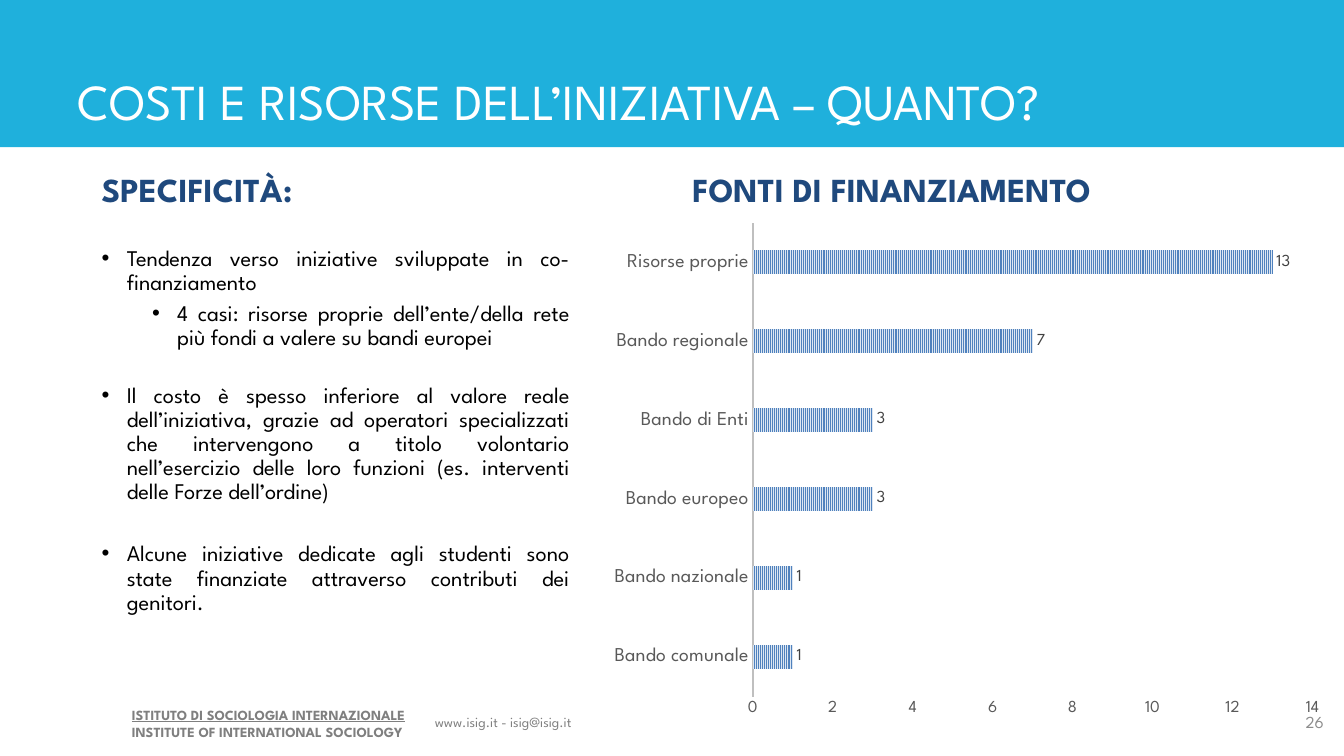
from lxml import etree
from pptx import Presentation
from pptx.chart.data import CategoryChartData
from pptx.dml.color import RGBColor
from pptx.enum.chart import XL_CHART_TYPE, XL_LABEL_POSITION, XL_TICK_MARK
from pptx.enum.dml import MSO_PATTERN
from pptx.enum.shapes import MSO_SHAPE
from pptx.enum.text import MSO_ANCHOR, PP_ALIGN
from pptx.oxml.ns import qn
from pptx.util import Inches, Pt

BAR_CHART = XL_CHART_TYPE.BAR_CLUSTERED
OUTSIDE_END = XL_LABEL_POSITION.OUTSIDE_END
NO_TICK = XL_TICK_MARK.NONE
STRIPES = MSO_PATTERN.NARROW_VERTICAL
RECTANGLE = MSO_SHAPE.RECTANGLE
TOP, MIDDLE, BOTTOM = MSO_ANCHOR.TOP, MSO_ANCHOR.MIDDLE, MSO_ANCHOR.BOTTOM
LEFT, CENTER, RIGHT = PP_ALIGN.LEFT, PP_ALIGN.CENTER, PP_ALIGN.RIGHT
JUSTIFY = PP_ALIGN.JUSTIFY

FONT = "League Spartan"
WIDTH, HEIGHT = 13.33, 7.5
BAND_HEIGHT = 1.46
LEFT_COLUMN, RIGHT_COLUMN = 0.91, 6.77
COLUMN_WIDTH = 5.64
HEADING_TOP, HEADING_HEIGHT = 1.63, 0.7
FOOTER_TOP = 6.96
HANGING = 0.25

# Text, left indent in inches, space before in points
POINTS = [
    ("Tendenza verso iniziative sviluppate in co-finanziamento", 0.25, 0),
    ("4 casi: risorse proprie dell’ente/della rete più fondi a valere su bandi europei",
     0.75, 4.8),
    ("Il costo è spesso inferiore al valore reale dell’iniziativa, grazie ad operatori "
     "specializzati che intervengono a titolo volontario nell’esercizio delle loro "
     "funzioni (es. interventi delle Forze dell’ordine)", 0.25, 24),
    ("Alcune iniziative dedicate agli studenti sono state finanziate attraverso "
     "contributi dei genitori.", 0.25, 27),
]
FUNDING = {
    "Bando comunale": 1,
    "Bando nazionale": 1,
    "Bando europeo": 3,
    "Bando di Enti": 3,
    "Bando regionale": 7,
    "Risorse proprie": 13,
}


def color(value):
    return RGBColor.from_string(value)


def style(font, size, tint, bold=False):
    font.name = FONT
    font.size = Pt(size)
    font.bold = bold
    font.color.rgb = color(tint)


def add_box(page, place, anchor=TOP, wrap=True):
    box = page.shapes.add_textbox(*map(Inches, place))
    frame = box.text_frame
    frame.word_wrap = wrap
    frame.vertical_anchor = anchor
    return frame


def add_line(page, place, text, size, tint, bold=False, align=LEFT, anchor=TOP, wrap=True):
    """Add a box that holds a single paragraph."""
    para = add_box(page, place, anchor, wrap).paragraphs[0]
    para.text = text
    para.alignment = align
    style(para.font, size, tint, bold)


def add_band(page):
    band = page.shapes.add_shape(RECTANGLE, 0, 0, Inches(WIDTH), Inches(BAND_HEIGHT))
    band.shadow.inherit = False
    band.fill.solid()
    band.fill.fore_color.rgb = color("1FB0DC")
    band.line.fill.background()


def add_heading(page, left, text):
    place = (left, HEADING_TOP, COLUMN_WIDTH, HEADING_HEIGHT)
    add_line(page, place, text, 24, "1F497D", bold=True)


def add_bullet(para, indent):
    properties = para._p.get_or_add_pPr()
    properties.set("marL", str(Inches(indent)))
    properties.set("indent", str(-Inches(HANGING)))
    etree.SubElement(properties, qn("a:buFont")).set("typeface", "Arial")
    etree.SubElement(properties, qn("a:buChar")).set("char", "•")


def add_points(page):
    frame = add_box(page, (LEFT_COLUMN, 2.4, 4.84, 4.35))
    for index, (text, indent, space) in enumerate(POINTS):
        para = frame.add_paragraph() if index else frame.paragraphs[0]
        para.text = text
        para.alignment = JUSTIFY
        para.line_spacing = 0.9
        para.space_before = Pt(space)
        add_bullet(para, indent)
        style(para.font, 16, "000000")


def add_institute(page):
    frame = add_box(page, (1.21, FOOTER_TOP, 3.02, 0.44), wrap=False)
    names = ("ISTITUTO DI SOCIOLOGIA INTERNAZIONALE", "INSTITUTE OF INTERNATIONAL SOCIOLOGY")
    for index, name in enumerate(names):
        para = frame.add_paragraph() if index else frame.paragraphs[0]
        para.text = name
        para.alignment = JUSTIFY
        style(para.font, 10, "7F7F7F", bold=True)
        para.font.underline = index == 0


def style_axis(axis, size):
    axis.has_major_gridlines = False
    axis.major_tick_mark = axis.minor_tick_mark = NO_TICK
    style(axis.tick_labels.font, size, "595959")


def add_funding_chart(page):
    data = CategoryChartData(number_format="###0")
    data.categories = list(FUNDING)
    data.add_series("Series 1", list(FUNDING.values()))
    place = map(Inches, (5.95, 2.11, 7.28, 5.1))
    chart = page.shapes.add_chart(BAR_CHART, *place, data).chart
    chart.has_legend = chart.has_title = False
    style(chart.font, 10, "000000")

    categories, values = chart.category_axis, chart.value_axis
    style_axis(categories, 14)
    categories.format.line.color.rgb = color("BFBFBF")
    categories.format.line.width = Pt(1.5)
    style_axis(values, 12)
    values.format.line.fill.background()
    values.minimum_scale, values.maximum_scale, values.major_unit = 0, 14, 2

    plot = chart.plots[0]
    plot.vary_by_categories = False
    plot.gap_width, plot.overlap = 227, -48
    fill = plot.series[0].format.fill
    fill.patterned()
    fill.pattern = STRIPES
    fill.fore_color.rgb = color("4F81BD")
    fill.back_color.rgb = color("DCE6F2")

    plot.has_data_labels = True
    labels = plot.data_labels
    labels.show_value = True
    labels.position = OUTSIDE_END
    labels.number_format = "###0"
    labels.number_format_is_linked = False
    style(labels.font, 12, "404040")


def main():
    deck = Presentation()
    deck.slide_width, deck.slide_height = Inches(WIDTH), Inches(HEIGHT)
    page = deck.slides.add_slide(deck.slide_layouts[6])
    add_institute(page)
    add_line(page, (4.15, 7.03, 1.68, 0.27), "www.isig.it - isig@isig.it", 10, "808080",
             align=CENTER, wrap=False)
    add_band(page)
    add_line(page, (0.67, 0, 11.74, 1.34), "COSTI E RISORSE DELL’INIZIATIVA – QUANTO?",
             36, "FFFFFF", anchor=BOTTOM)
    add_heading(page, LEFT_COLUMN, "SPECIFICITÀ:")
    add_points(page)
    add_heading(page, RIGHT_COLUMN, "FONTI DI FINANZIAMENTO")
    add_funding_chart(page)
    add_line(page, (12.76, FOOTER_TOP, 0.47, 0.4), "26", 12, "8C8C8C",
             align=RIGHT, anchor=MIDDLE)
    deck.save("out.pptx")


if __name__ == "__main__":
    main()
